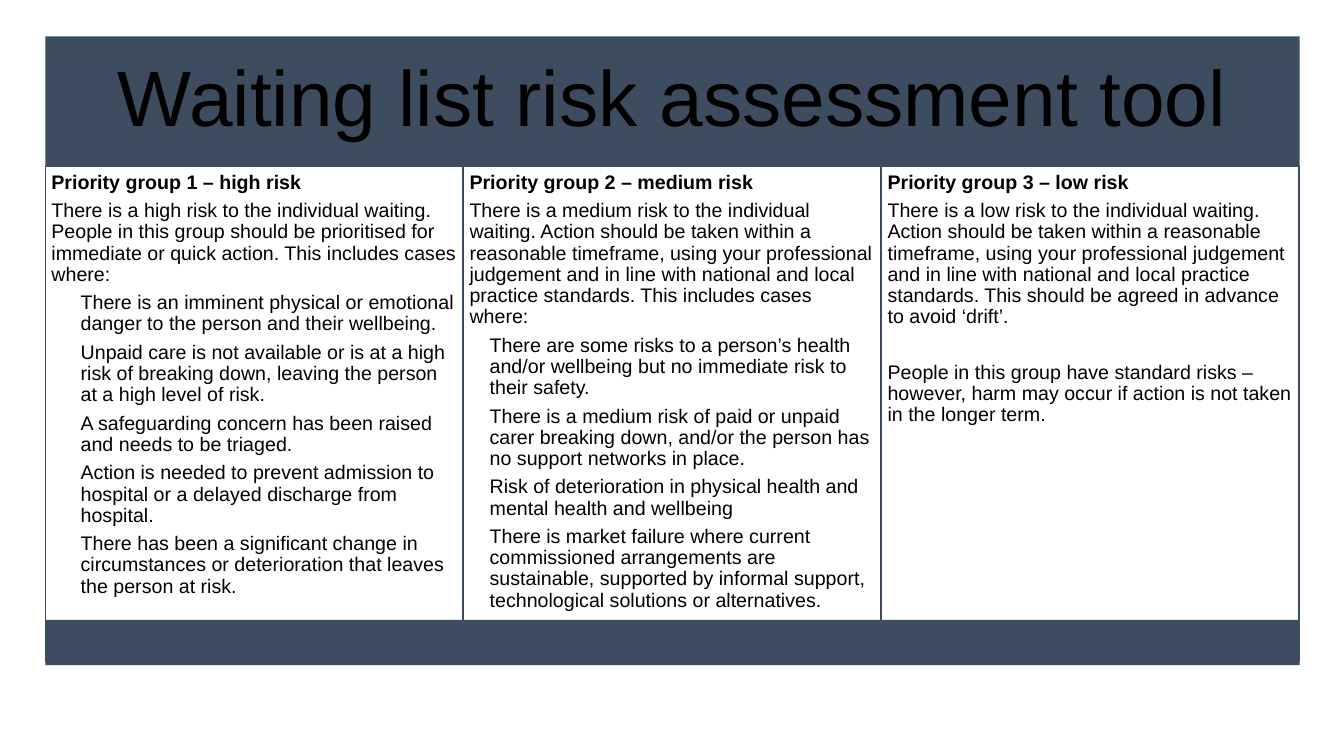
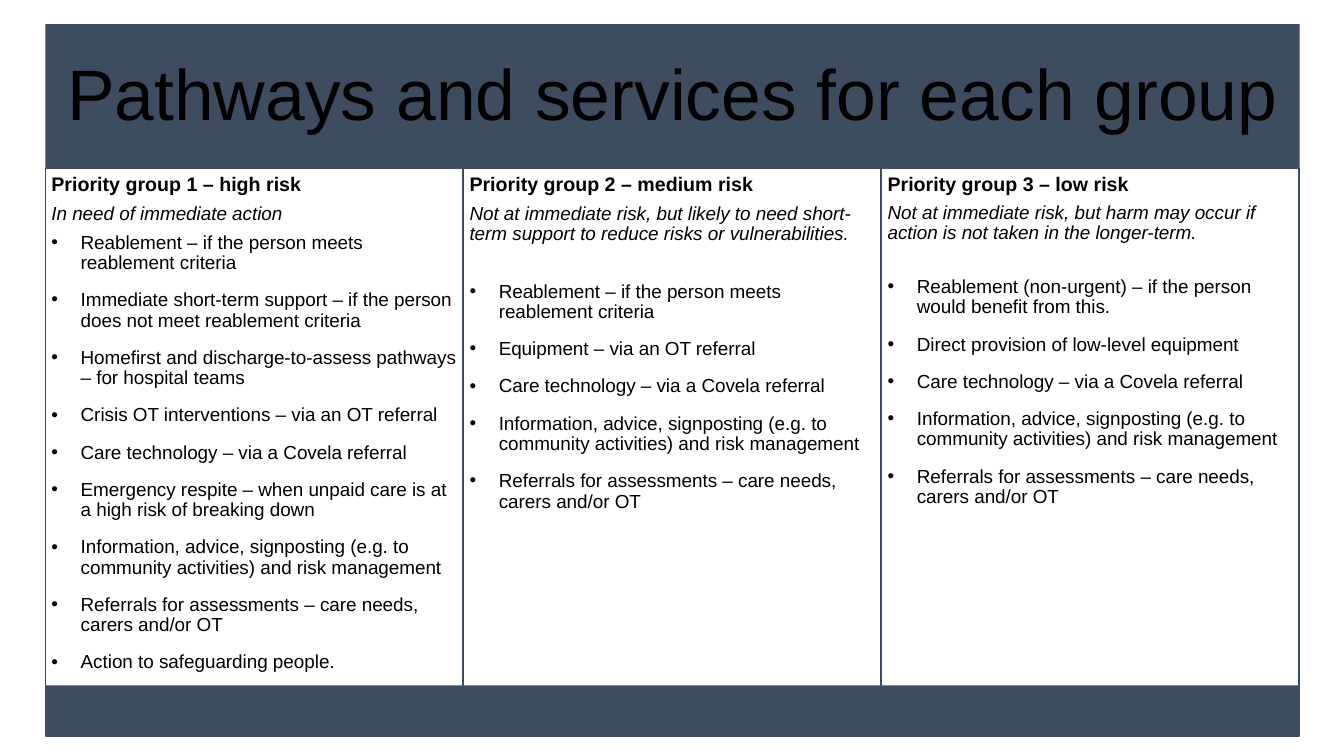
from lxml import etree
from pptx import Presentation
from pptx.dml.color import RGBColor
from pptx.enum.shapes import MSO_SHAPE as SHAPE
from pptx.enum.text import MSO_ANCHOR as ANCHOR, MSO_AUTO_SIZE as AUTO, PP_ALIGN as ALIGN
from pptx.oxml.ns import qn
from pptx.util import Inches, Pt

NAVY, WHITE, BLACK = "3E4C60", "FFFFFF", "000000"
FONT = "Arial"
LEFT, WIDTH = 0.45, 12.44
STEP, COL_W = WIDTH / 3, 4.14
HEADINGS = [
    "Priority group 1 – high risk",
    "Priority group 2 – medium risk",
    "Priority group 3 – low risk",
]
TECH = "Care technology – via a Covela referral"
ADVICE = "Information, advice, signposting (e.g. to community activities) and risk management"
REFERRALS = "Referrals for assessments – care needs, carers and/or OT"
REABLEMENT = "Reablement – if the person meets reablement criteria"

SLIDES = [
    dict(
        title="Waiting list risk assessment tool", title_size=56, inset=0.23,
        band=(0.36, 1.29), panel=(1.65, 4.91), foot=(6.15, 0.45),
        size=14, item_after=5.2, bullets=False,
        columns=[
            dict(
                intro="There is a high risk to the individual waiting. People in this group should be "
                      "prioritised for immediate or quick action. This includes cases where:",
                after=5.2, gap=5.2, indent=0.29,
                items=[
                    "There is an imminent physical or emotional danger to the person and their wellbeing.",
                    "Unpaid care is not available or is at a high risk of breaking down, leaving the "
                    "person at a high level of risk.",
                    "A safeguarding concern has been raised and needs to be triaged.",
                    "Action is needed to prevent admission to hospital or a delayed discharge from hospital.",
                    "There has been a significant change in circumstances or deterioration that leaves "
                    "the person at risk.",
                ],
            ),
            dict(
                intro="There is a medium risk to the individual waiting. Action should be taken within a "
                      "reasonable timeframe, using your professional judgement and in line with national "
                      "and local practice standards. This includes cases where:",
                after=5.2, gap=5.2, indent=0.2,
                items=[
                    "There are some risks to a person’s health and/or wellbeing but no immediate risk to "
                    "their safety.",
                    "There is a medium risk of paid or unpaid carer breaking down, and/or the person has "
                    "no support networks in place.",
                    "Risk of deterioration in physical health and mental health and wellbeing",
                    "There is market failure where current commissioned arrangements are sustainable, "
                    "supported by informal support, technological solutions or alternatives.",
                ],
            ),
            dict(
                intro="There is a low risk to the individual waiting. Action should be taken within a "
                      "reasonable timeframe, using your professional judgement and in line with national "
                      "and local practice standards. This should be agreed in advance to avoid ‘drift’.",
                after=5.2, gap=24.5, indent=0,
                items=[
                    "People in this group have standard risks – however, harm may occur if action is not "
                    "taken in the longer term.",
                ],
            ),
        ],
    ),
    dict(
        title="Pathways and services for each group", title_size=51, inset=0.21,
        band=(0.24, 1.45), panel=(1.67, 5.62), foot=(6.8, 0.51),
        size=13.5, item_after=12, bullets=True,
        columns=[
            dict(
                intro="In need of immediate action", after=6, gap=6, indent=0.29,
                items=[
                    REABLEMENT,
                    "Immediate short-term support – if the person does not meet reablement criteria",
                    "Homefirst and discharge-to-assess pathways – for hospital teams",
                    "Crisis OT interventions – via an OT referral",
                    TECH,
                    "Emergency respite – when unpaid care is at a high risk of breaking down",
                    ADVICE,
                    REFERRALS,
                    "Action to safeguarding people.",
                ],
            ),
            dict(
                intro="Not at immediate risk, but likely to need short-term support to reduce risks or "
                      "vulnerabilities.",
                after=6, gap=26.5, indent=0.29,
                items=[REABLEMENT, "Equipment – via an OT referral", TECH, ADVICE, REFERRALS],
            ),
            dict(
                intro="Not at immediate risk, but harm may occur if action is not taken in the longer-term.",
                after=5.2, gap=24, indent=0.29,
                items=[
                    "Reablement (non-urgent) – if the person would benefit from this.",
                    "Direct provision of low-level equipment",
                    TECH, ADVICE, REFERRALS,
                ],
            ),
        ],
    ),
]


def rgb(value):
    return RGBColor.from_string(value)


def add_text(p, text, size, after, bold=False, italic=False, indent=0, bullet=False):
    pPr = p._p.get_or_add_pPr()
    pPr.set("marL", str(Inches(indent)))
    pPr.set("indent", str(-Inches(indent) if bullet else 0))
    if bullet:
        p.level = 1
        etree.SubElement(pPr, qn("a:buChar")).set("char", "•")
    else:
        etree.SubElement(pPr, qn("a:buNone"))
    p.line_spacing = 0.9
    p.space_before, p.space_after = Pt(0), Pt(after)
    r = p.add_run()
    r.text = text
    f = r.font
    f.name, f.size, f.bold, f.italic = FONT, Pt(size), bold, italic
    f.color.rgb = rgb(BLACK)


prs = Presentation()
prs.slide_width, prs.slide_height = Inches(13.33), Inches(7.5)
comparison = prs.slide_layouts[4]

for d in SLIDES:
    s = prs.slides.add_slide(comparison)
    title, *bodies = s.placeholders
    spare = bodies.pop()
    spare.element.getparent().remove(spare.element)

    top, height = d["band"]
    boxes = [(title, LEFT, top, WIDTH, height, NAVY, d["inset"], ANCHOR.MIDDLE)]
    top, height = d["panel"]
    for i, body in enumerate(bodies):
        boxes.append((body, LEFT + i * STEP, top, COL_W, height, WHITE, 0.06, ANCHOR.TOP))

    for sp, x, y, w, h, colour, inset, anchor in boxes:
        sp.left, sp.top, sp.width, sp.height = Inches(x), Inches(y), Inches(w), Inches(h)
        sp.fill.solid()
        sp.fill.fore_color.rgb = rgb(colour)
        tf = sp.text_frame
        tf.word_wrap, tf.auto_size, tf.vertical_anchor = True, AUTO.NONE, anchor
        tf.margin_left = tf.margin_right = tf.margin_top = tf.margin_bottom = Inches(inset)

    p = title.text_frame.paragraphs[0]
    add_text(p, d["title"], d["title_size"], 0)
    p.alignment = ALIGN.CENTER

    for body, heading, col in zip(bodies, HEADINGS, d["columns"]):
        body.line.color.rgb = rgb(NAVY)
        body.line.width = Pt(1)
        tf = body.text_frame
        add_text(tf.paragraphs[0], heading, 14, col["after"], bold=True)
        add_text(tf.add_paragraph(), col["intro"], d["size"], col["gap"], italic=d["bullets"])
        for item in col["items"]:
            add_text(tf.add_paragraph(), item, d["size"], d["item_after"],
                     indent=col["indent"], bullet=d["bullets"])

    top, height = d["foot"]
    foot = s.shapes.add_shape(SHAPE.RECTANGLE, Inches(LEFT), Inches(top), Inches(WIDTH), Inches(height))
    foot.shadow.inherit = False
    foot.fill.solid()
    foot.fill.fore_color.rgb = rgb(NAVY)
    foot.line.fill.background()

prs.save("out.pptx")
